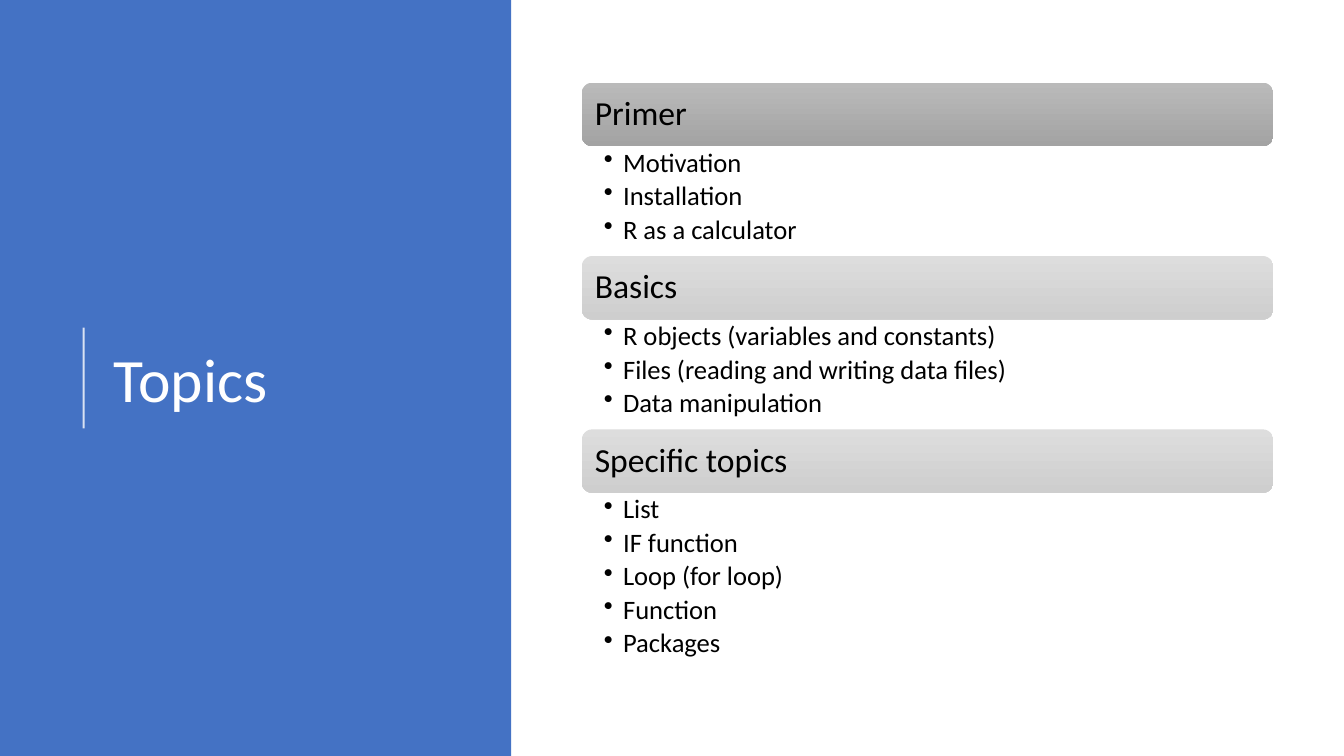
from dataclasses import dataclass

from pptx import Presentation
from pptx.dml.color import RGBColor
from pptx.enum.shapes import MSO_CONNECTOR as Link, MSO_SHAPE as Kind
from pptx.enum.text import MSO_ANCHOR as Anchor, PP_ALIGN as Align
from pptx.oxml.ns import qn
from pptx.oxml.xmlchemy import OxmlElement as Node
from pptx.shapes.base import BaseShape
from pptx.slide import Slide
from pptx.util import Inches, Pt

BLUE = RGBColor(0x44, 0x72, 0xC4)
WHITE = RGBColor(0xFF, 0xFF, 0xFF)
BLACK = RGBColor(0x00, 0x00, 0x00)
DARK = (RGBColor(0xBA, 0xBA, 0xBA), RGBColor(0xA3, 0xA3, 0xA3))
LIGHT = (RGBColor(0xDD, 0xDD, 0xDD), RGBColor(0xCE, 0xCE, 0xCE))

FONT = "Calibri"
LEFT, TOP, WIDTH = 5.77, 0.82, 6.86
BAR = 0.63  # height of a heading bar
ROW, PAD = 0.35, 0.04  # height of a list item, spare room in a list


@dataclass
class Topic:
    head: str
    items: list[str]
    tones: tuple[RGBColor, RGBColor] = LIGHT


TOPICS = [
    Topic("Primer", ["Motivation", "Installation", "R as a calculator"], DARK),
    Topic("Basics", [
        "R objects (variables and constants)",
        "Files (reading and writing data files)",
        "Data manipulation",
    ]),
    Topic("Specific topics", [
        "List", "IF function", "Loop (for loop)", "Function", "Packages",
    ]),
]


def write(shape: BaseShape, lines: list[str], *, size: float,
          color: RGBColor = BLACK, anchor: Anchor = Anchor.MIDDLE,
          inset: tuple[float, float, float, float] = (0.1, 0.05, 0.1, 0.05),
          after: float = 0, bullet: bool = False) -> None:
    """Fill a shape with one paragraph per line; inset is left, top, right, bottom."""
    frame = shape.text_frame
    frame.word_wrap = True
    frame.vertical_anchor = anchor
    (frame.margin_left, frame.margin_top,
     frame.margin_right, frame.margin_bottom) = map(Inches, inset)
    for i, line in enumerate(lines):
        para = frame.add_paragraph() if i else frame.paragraphs[0]
        para.alignment = Align.LEFT
        para.line_spacing = 0.9
        para.space_after = Pt(after)
        run = para.add_run()
        run.text = line
        run.font.name = FONT
        run.font.size = Pt(size)
        run.font.color.rgb = color
        if bullet:
            props = para._p.get_or_add_pPr()
            props.set("marL", str(Inches(0.19)))
            props.set("indent", str(-Inches(0.19)))
            mark = Node("a:buChar")
            mark.set("char", "•")
            props.append(mark)


def block(slide: Slide, kind: Kind, x: float, y: float,
          w: float, h: float) -> BaseShape:
    shape = slide.shapes.add_shape(kind, Inches(x), Inches(y), Inches(w), Inches(h))
    shape.shadow.inherit = False
    shape.line.fill.background()
    return shape


def box(slide: Slide, x: float, y: float, w: float, h: float) -> BaseShape:
    return slide.shapes.add_textbox(Inches(x), Inches(y), Inches(w), Inches(h))


def panel(slide: Slide) -> None:
    """Blue side panel with the title and its rule."""
    side = block(slide, Kind.RECTANGLE, 0, 0, 5.07, 7.5)
    side.fill.solid()
    side.fill.fore_color.rgb = BLUE

    rule = slide.shapes.add_connector(
        Link.STRAIGHT, Inches(0.83), Inches(4.25), Inches(0.83), Inches(3.25))
    rule.line.color.rgb = WHITE
    rule.line.width = Pt(1.5)
    alpha = Node("a:alpha")
    alpha.set("val", "80000")
    props = rule._element.spPr
    props.find(".//" + qn("a:srgbClr")).append(alpha)
    props.append(Node("a:effectLst"))

    write(box(slide, 1.03, 0.78, 3.69, 6.02), ["Topics"], size=44, color=WHITE)


def section(slide: Slide, topic: Topic, y: float) -> float:
    """Draw a heading bar and its list; return where the next one starts."""
    bar = block(slide, Kind.ROUNDED_RECTANGLE, LEFT, y, WIDTH, BAR)
    bar.fill.gradient()
    bar.fill.gradient_angle = 270
    for stop, tone in zip(bar.fill.gradient_stops, topic.tones):
        stop.color.rgb = tone
    write(bar, [topic.head], size=24)

    high = ROW * len(topic.items) + PAD
    write(box(slide, LEFT, y + BAR, WIDTH, high), topic.items, size=19,
          anchor=Anchor.TOP, inset=(0.22, 0.03, 0.19, 0.03),
          after=3.4, bullet=True)
    return y + BAR + high


def main() -> None:
    deck = Presentation()
    deck.slide_width, deck.slide_height = Inches(13.33), Inches(7.5)
    slide = deck.slides.add_slide(deck.slide_layouts[6])
    panel(slide)
    y = TOP
    for topic in TOPICS:
        y = section(slide, topic, y)
    deck.save("out.pptx")


if __name__ == "__main__":
    main()
